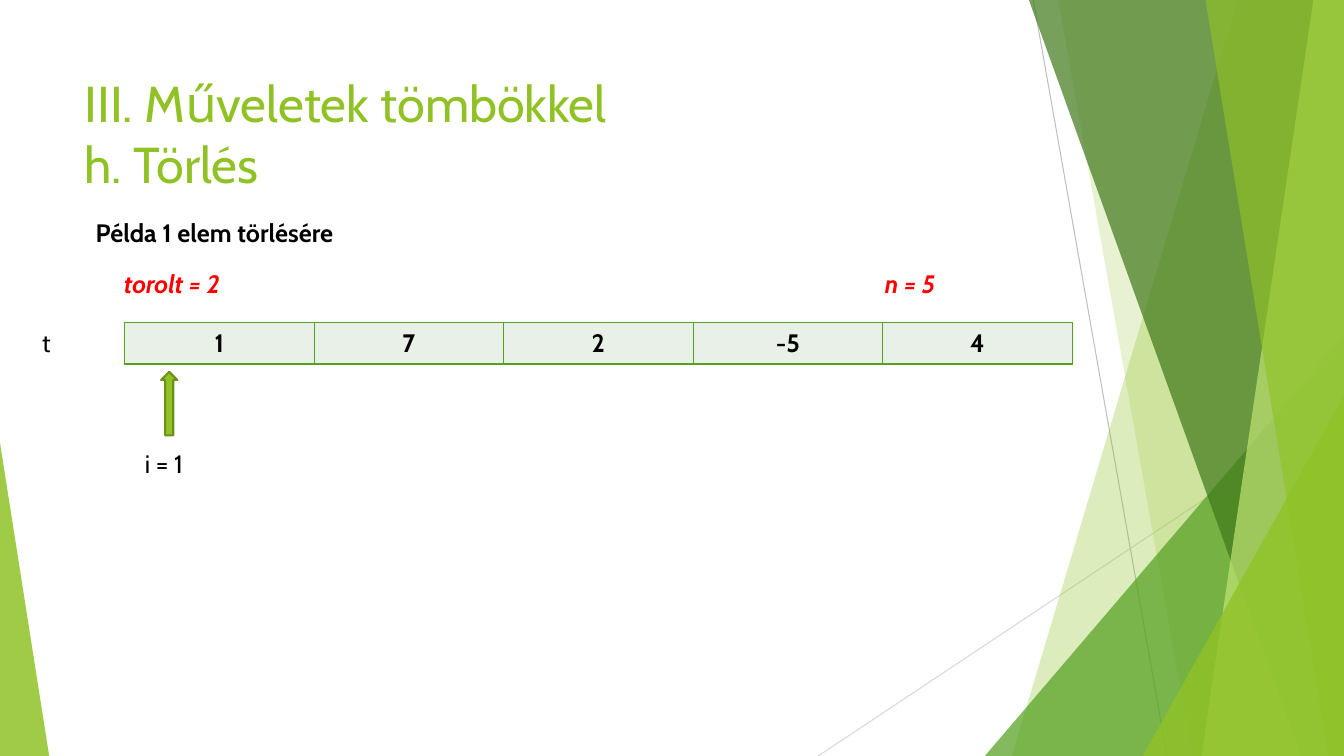
"""Build a slide that shows the first step of deleting an element from an array."""
from lxml.etree import SubElement
from pptx import Presentation
from pptx.dml.color import RGBColor
from pptx.enum.shapes import MSO_CONNECTOR, MSO_SHAPE
from pptx.enum.text import MSO_ANCHOR, PP_ALIGN
from pptx.oxml.ns import qn
from pptx.util import Cm, Pt

WIDE, HIGH = 33.87, 19.05
LIME, GREEN, BLACK, RED = "90C226", "54A021", "000000", "FF0000"


def paint(fill, color, alpha=100):
    fill.solid()
    fill.fore_color.rgb = RGBColor.from_string(color)
    if alpha < 100:
        tint = fill._xPr.find(qn("a:solidFill"))[0]
        SubElement(tint, qn("a:alpha"), val=str(alpha * 1000))


def style(frame, size, color, bold=False, italic=False):
    for par in frame.paragraphs:
        for run in par.runs:
            font = run.font
            font.name, font.size = "Cabin", Pt(size)
            font.bold, font.italic = bold, italic
            paint(font.fill, color)


deck = Presentation()
deck.slide_width, deck.slide_height = Cm(WIDE), Cm(HIGH)
slide = deck.slides.add_slide(deck.slide_layouts[6])
shapes = slide.shapes

rays = [
    (26.04, 0, 29.41, HIGH, "BFBFBF"),
    (WIDE, 10.24, 20.62, HIGH, "D9D9D9"),
]
for x1, y1, x2, y2, color in rays:
    ray = shapes.add_connector(MSO_CONNECTOR.STRAIGHT, Cm(x1), Cm(y1), Cm(x2), Cm(y2))
    ray.line.width = Pt(0.75)
    paint(ray.line.fill, color)
    SubElement(ray._element.spPr, qn("a:effectLst"))

# Bands give top and bottom x; wedges give left, top, width and apex.
facets = [
    ("band", (31.19, 25.5), LIME, 30),
    ("band", (26.67, 30.05), LIME, 20),
    ("wedge", (24.82, 8.46, 9.05, 1), GREEN, 72),
    ("band", (25.93, 32.79), "3F7819", 70),
    ("band", (33.1, 30.28), "C0E474", 70),
    ("band", (30.38, 33.48), LIME, 65),
    ("wedge", (28.8, 9.98, 5.07, 1), LIME, 80),
    ("wedge", (0, 11.15, 1.24, 0), LIME, 85),
]
for kind, place, color, alpha in facets:
    if kind == "band":
        top, base = place
        pen = shapes.build_freeform(Cm(top), 0)
        corners = [(WIDE, 0), (WIDE, HIGH), (base, HIGH)]
        pen.add_line_segments([(Cm(x), Cm(y)) for x, y in corners], close=True)
        facet = pen.convert_to_shape()
    else:
        left, top, width, apex = place
        facet = shapes.add_shape(
            MSO_SHAPE.ISOSCELES_TRIANGLE, Cm(left), Cm(top), Cm(width), Cm(HIGH - top))
        facet.adjustments[0] = apex
    facet.shadow.inherit = False
    facet.line.fill.background()
    paint(facet.fill, color, alpha)

values = ["1", "7", "2", "-5", "4"]
table = shapes.add_table(1, len(values), Cm(3.14), Cm(8.13), Cm(23.88), Cm(1.04)).table
for cell, value in zip(table.rows[0].cells, values):
    cell.text = value
    cell.vertical_anchor = MSO_ANCHOR.MIDDLE
    cell.text_frame.paragraphs[0].alignment = PP_ALIGN.CENTER
    style(cell.text_frame, 18, BLACK, bold=True)
    props = cell._tc.get_or_add_tcPr()
    for side in "LRTB":
        edge = SubElement(props, qn(f"a:ln{side}"), w=str(Pt(1)))
        SubElement(SubElement(edge, qn("a:solidFill")), qn("a:srgbClr"), val=GREEN)
    paint(cell.fill, "E9F0E8")

labels = [
    ("III. Műveletek tömbökkel\vh. Törlés", 1.88, 1.7, 23.88, 3.66, 36, LIME, False, False),
    ("t", 0.81, 8.13, 1.57, 1.04, 18, BLACK, False, False),
    ("torolt = 2", 2.87, 6.63, 6.58, 1.02, 18, RED, True, True),
    ("Példa 1 elem törlésére", 2.16, 5.36, 8.61, 1.02, 18, BLACK, True, False),
    ("i = 1", 3.4, 11.18, 3, 1.02, 18, BLACK, False, False),
    ("n = 5", 22.05, 6.63, 4.72, 1.02, 18, RED, True, True),
]
for text, left, top, width, height, *look in labels:
    frame = shapes.add_textbox(Cm(left), Cm(top), Cm(width), Cm(height)).text_frame
    frame.word_wrap = True
    frame.text = text
    style(frame, *look)

arrow = shapes.add_shape(MSO_SHAPE.UP_ARROW, Cm(4.06), Cm(9.37), Cm(0.41), Cm(1.6))
arrow.shadow.inherit = False
arrow.line.width = Pt(1.5)
paint(arrow.fill, LIME)
paint(arrow.line.fill, "6B901C")

deck.save("out.pptx")
